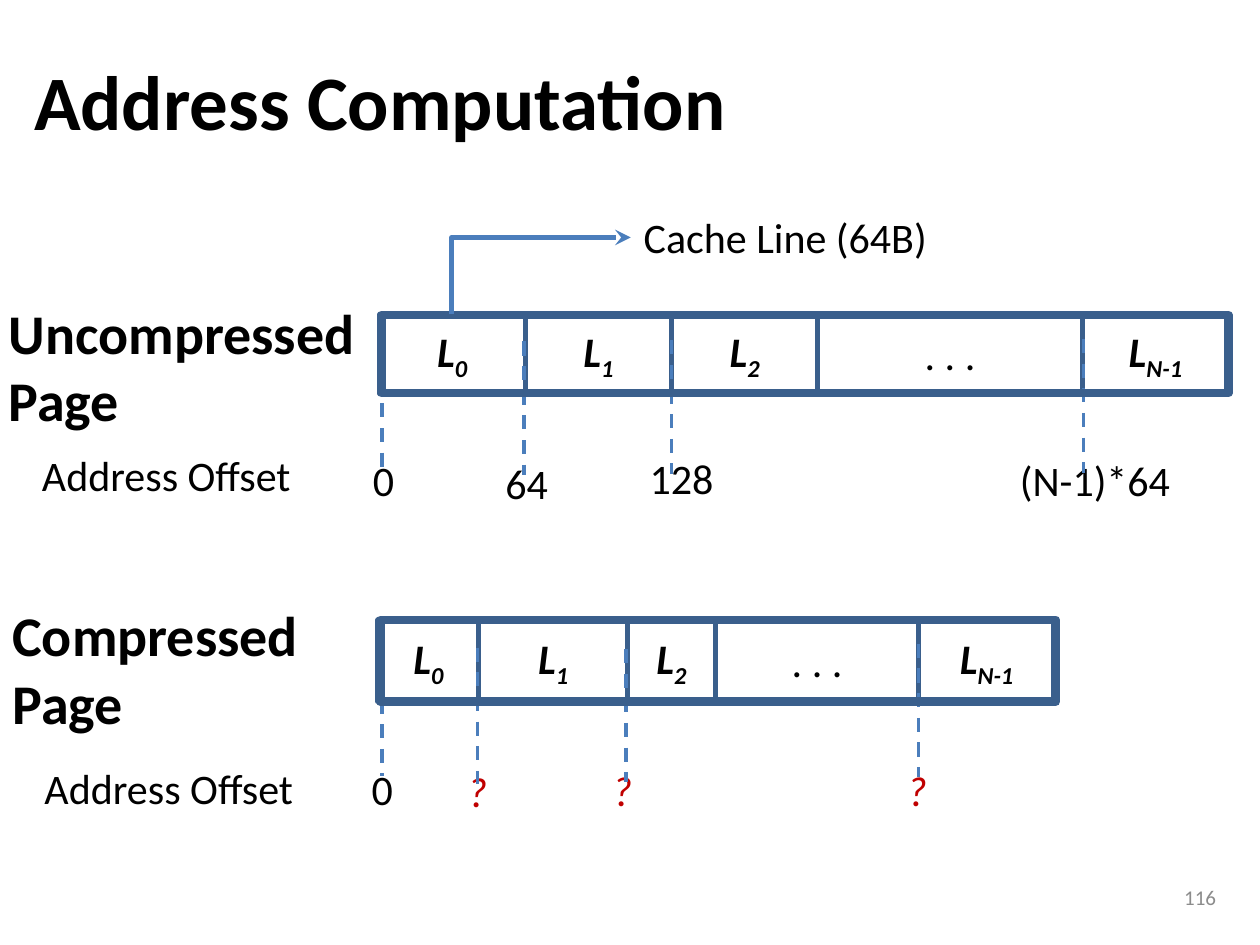
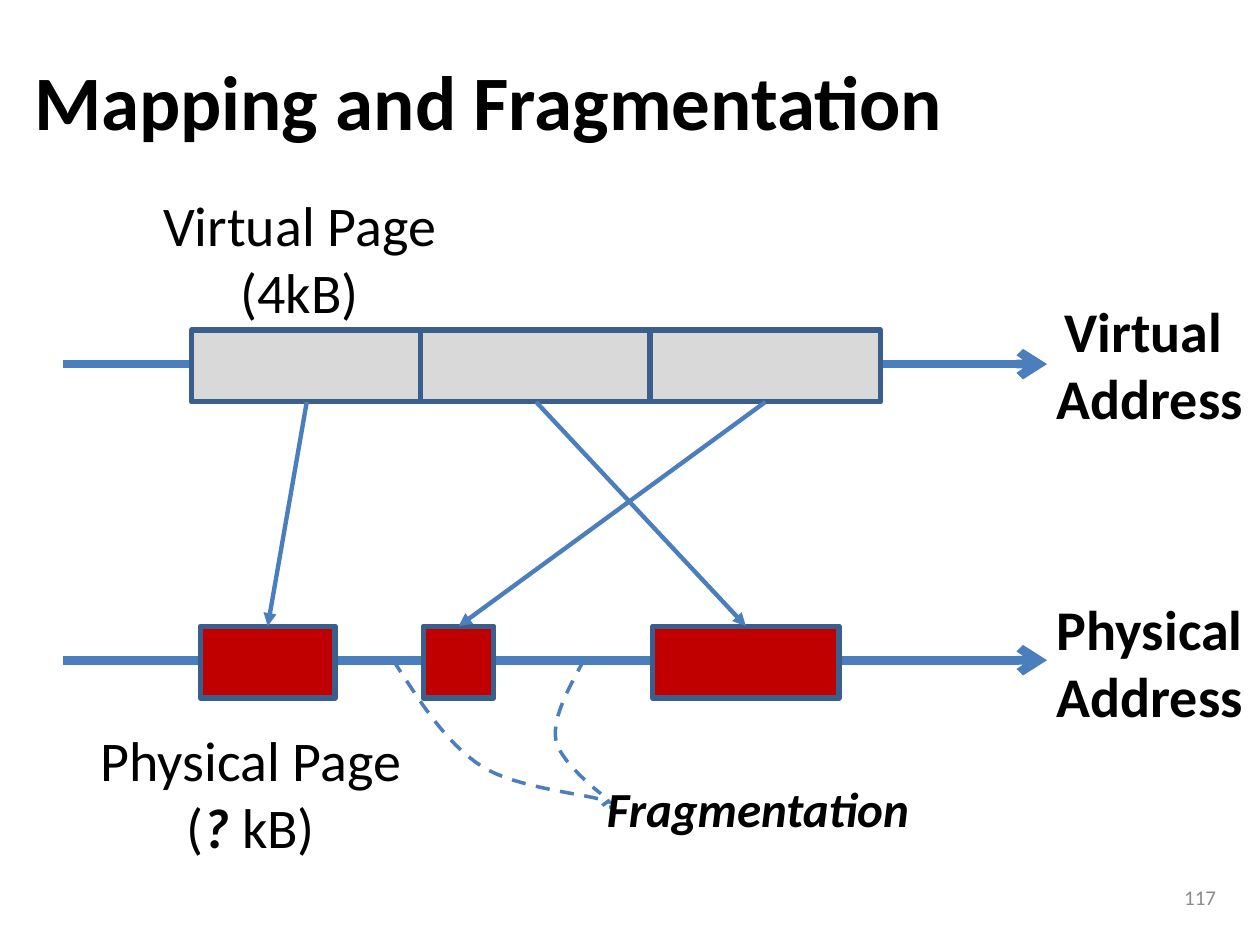
"""Build two slides on address computation and page mapping under memory compression."""
from dataclasses import dataclass
from itertools import accumulate

from lxml.etree import SubElement
from pptx import Presentation
from pptx.dml.color import RGBColor
from pptx.enum.dml import MSO_LINE
from pptx.enum.shapes import MSO_CONNECTOR, MSO_SHAPE
from pptx.enum.text import MSO_ANCHOR, PP_ALIGN
from pptx.oxml.ns import qn
from pptx.util import Inches, Pt

LEFT, CENTER, RIGHT = PP_ALIGN.LEFT, PP_ALIGN.CENTER, PP_ALIGN.RIGHT
TOP, MIDDLE = MSO_ANCHOR.TOP, MSO_ANCHOR.MIDDLE
STRAIGHT, ELBOW = MSO_CONNECTOR.STRAIGHT, MSO_CONNECTOR.ELBOW
RECT, DASH = MSO_SHAPE.RECTANGLE, MSO_LINE.DASH
TITLE_ONLY = 5
CURVE_STEPS = 16


@dataclass(frozen=True)
class Theme:
    font: str = "Calibri"
    ink: str = "000000"
    muted: str = "8C8C8C"
    accent: str = "4B7EBC"
    border: str = "3A5F8C"
    page: str = "D9D9D9"
    red: str = "C00000"
    title: int = 44
    head: int = 32
    callout: int = 28
    body: int = 24
    number: int = 12
    thin: float = 2
    arrow: float = 2.5
    medium: float = 3
    thick: float = 5


T = Theme()
BOLD = {"bold": True}
ITALIC = {"italic": True}
BOLD_ITALIC = BOLD | ITALIC


@dataclass(frozen=True)
class Run:
    text: str
    fmt: dict
    sub: bool = False


@dataclass(frozen=True)
class Box:
    x: float
    y: float
    w: float
    h: float

    def emu(self) -> list:
        return [Inches(v) for v in (self.x, self.y, self.w, self.h)]


@dataclass(frozen=True)
class Label:
    box: Box
    paras: tuple
    size: int = T.body
    align: PP_ALIGN = CENTER
    anchor: MSO_ANCHOR = TOP
    color: str = T.ink


@dataclass(frozen=True)
class Tick:
    x: float
    top: float
    bottom: float
    text: str
    box: Box


@dataclass(frozen=True)
class PageRow:
    left: float
    widths: tuple
    frame: Box
    ticks: tuple
    heading: str
    heading_box: Box
    offset_box: Box


def plain(text: str, **fmt) -> tuple:
    return (Run(text, fmt),)


def indexed(index: str) -> tuple:
    return (Run("L", BOLD_ITALIC), Run(index, BOLD_ITALIC, sub=True))


CELLS = (indexed("0"), indexed("1"), indexed("2"), plain(". . ."), indexed("N-1"))

UNCOMPRESSED = PageRow(
    3.01, (1.16, 1.16, 1.16, 2.1, 1.16), Box(3.03, 2.5, 6.72, 0.62),
    (Tick(3.03, 2.81, 3.71, "0", Box(2.68, 3.56, 0.73, 0.5)),
     Tick(4.16, 2.71, 3.77, "64", Box(3.76, 3.58, 0.84, 0.5)),
     Tick(5.33, 2.7, 3.76, "128", Box(4.83, 3.54, 1.16, 0.5)),
     Tick(8.6, 2.69, 3.75, "(N-1)*64", Box(7.48, 3.56, 2.42, 0.5))),
    "Uncompressed Page", Box(-0.03, 2.32, 3.42, 1.18), Box(-0.03, 3.52, 2.7, 0.5))

COMPRESSED = PageRow(
    3, (0.8, 1.18, 0.7, 1.61, 1.08), Box(3.02, 4.92, 5.36, 0.65),
    (Tick(3.03, 5.16, 6.16, "0", Box(2.67, 6.01, 0.73, 0.5)),
     Tick(3.79, 5.14, 6.22, "?", Box(3.46, 6.03, 0.66, 0.5)),
     Tick(4.97, 5.15, 6.21, "?", Box(4.61, 6.02, 0.66, 0.5)),
     Tick(7.29, 5.11, 6.17, "?", Box(6.95, 6.02, 0.66, 0.5))),
    "Compressed Page", Box(0, 4.72, 3, 1.18), Box(0, 6, 2.68, 0.5))


def write(sp, label: Label) -> None:
    tf = sp.text_frame
    tf.word_wrap = True
    tf.vertical_anchor = label.anchor
    for i, runs in enumerate(label.paras):
        p = tf.add_paragraph() if i else tf.paragraphs[0]
        p.alignment = label.align
        for run in runs:
            r = p.add_run()
            r.text = run.text
            base = {"name": T.font, "size": Pt(label.size), "bold": False, "italic": False}
            for key, value in (base | run.fmt).items():
                setattr(r.font, key, value)
            r.font.color.rgb = RGBColor.from_string(label.color)
            if run.sub:
                r.font._element.set("baseline", "-25000")


def add_label(slide, label: Label) -> None:
    write(slide.shapes.add_textbox(*label.box.emu()), label)


def style_line(sp, color: str, width: float, dashed: bool = False, tail: str = "") -> None:
    sp.line.color.rgb = RGBColor.from_string(color)
    sp.line.width = Pt(width)
    if dashed:
        sp.line.dash_style = DASH
    if tail:
        SubElement(sp.element.spPr.get_or_add_ln(), qn("a:tailEnd"), type=tail)


def add_rect(slide, box: Box, fill: str = "", width: float = T.medium):
    sp = slide.shapes.add_shape(RECT, *box.emu())
    sp.shadow.inherit = False
    if fill:
        sp.fill.solid()
        sp.fill.fore_color.rgb = RGBColor.from_string(fill)
    else:
        sp.fill.background()
    style_line(sp, T.border, width)
    return sp


def add_line(slide, start: tuple, end: tuple, width: float, kind=STRAIGHT,
             dashed: bool = False, tail: str = ""):
    sp = slide.shapes.add_connector(kind, *[Inches(v) for v in start + end])
    style_line(sp, T.accent, width, dashed, tail)
    SubElement(sp.element.spPr, qn("a:effectLst"))
    return sp


def bezier(points: tuple, t: float) -> tuple:
    weights = ((1 - t) ** 3, 3 * t * (1 - t) ** 2, 3 * t * t * (1 - t), t ** 3)
    return tuple(Inches(sum(w * p[axis] for w, p in zip(weights, points))) for axis in (0, 1))


def add_curve(slide, *knots: tuple) -> None:
    points = [bezier(knots[i:i + 4], step / CURVE_STEPS)
              for i in range(0, len(knots) - 1, 3) for step in range(1, CURVE_STEPS + 1)]
    builder = slide.shapes.build_freeform(*[Inches(v) for v in knots[0]])
    builder.add_line_segments(points, close=False)
    sp = builder.convert_to_shape()
    sp.shadow.inherit = False
    sp.fill.background()
    style_line(sp, T.accent, T.thin, dashed=True)


def new_slide(prs, title: str, number: int):
    slide = prs.slides.add_slide(prs.slide_layouts[TITLE_ONLY])
    box = Box(0.17, 0.17, 9, 1.25)
    sp = slide.shapes.title
    sp.left, sp.top, sp.width, sp.height = box.emu()
    write(sp, Label(box, (plain(title, **BOLD),), T.title, LEFT, MIDDLE))
    add_label(slide, Label(Box(7.42, 6.92, 2.33, 0.4), (plain(str(number)),),
                           T.number, RIGHT, MIDDLE, T.muted))
    return slide


def add_page_row(slide, row: PageRow) -> None:
    lefts = accumulate(row.widths, initial=row.left)
    for x, w, runs in zip(lefts, row.widths, CELLS):
        box = Box(x, row.frame.y, w, row.frame.h)
        write(add_rect(slide, box), Label(box, (runs,), anchor=MIDDLE))
    for tick in row.ticks:
        unknown = tick.text == "?"
        add_label(slide, Label(tick.box, (plain(tick.text, italic=unknown),),
                               color=T.red if unknown else T.ink))
        add_line(slide, (tick.x, tick.top), (tick.x, tick.bottom), T.thin, dashed=True)
    add_rect(slide, row.frame, width=T.thick)
    add_label(slide, Label(row.heading_box, (plain(row.heading, **BOLD),), T.head, LEFT))
    add_label(slide, Label(row.offset_box, (plain("Address Offset"),)))


def build_address_slide(prs) -> None:
    slide = new_slide(prs, "Address Computation", 116)
    for row in (UNCOMPRESSED, COMPRESSED):
        add_page_row(slide, row)
    elbow = add_line(slide, (4.6, 2.9), (3.99, 1.48), T.medium, ELBOW, tail="stealth")
    elbow.element.spPr.find(qn("a:prstGeom")).set("prst", "bentConnector2")
    elbow.element.spPr.find(qn("a:xfrm")).set("rot", "5400000")
    add_label(slide, Label(Box(5.01, 1.63, 2.51, 0.5), (plain("Cache Line (64B)"),), align=LEFT))


def build_mapping_slide(prs) -> None:
    slide = new_slide(prs, "Mapping and Fragmentation", 117)
    page_h, virtual_y, physical_y = 0.57, 2.62, 4.97
    virtual = [Box(1.52 + 1.82 * i, virtual_y, 1.83, page_h) for i in range(3)]
    physical = [Box(x, physical_y, w, page_h)
                for x, w in ((1.59, 1.07), (3.36, 0.56), (5.18, 1.48))]
    axes = ((2.89, virtual, T.page, "Virtual ", 2.3),
            (5.24, physical, T.red, "Physical ", 4.67))
    for y, pages, fill, name, label_y in axes:
        add_line(slide, (0.5, y), (8.31, y), T.thick, tail="arrow")
        for box in pages:
            add_rect(slide, box, fill)
        add_label(slide, Label(Box(8.25, label_y, 1.75, 1.18),
                               (plain(name, **BOLD), plain("Address", **BOLD)), T.head))
    for src, dst in zip(virtual, (physical[0], physical[2], physical[1])):
        add_line(slide, (src.x + src.w / 2, src.y + src.h), (dst.x + dst.w / 2, dst.y),
                 T.arrow, tail="triangle")
    add_curve(slide, (4.64, 5.23), (4.52, 5.45), (4.39, 5.68), (4.41, 5.86),
              (4.43, 6.04), (4.77, 6.3), (4.77, 6.3))
    add_curve(slide, (3.12, 5.24), (3.33, 5.56), (3.53, 5.89), (3.82, 6.08),
              (4.1, 6.26), (4.66, 6.3), (4.82, 6.36), (4.98, 6.41), (4.77, 6.41),
              (4.77, 6.41), (4.77, 6.4), (4.8, 6.38), (4.84, 6.35))
    size = (Run("(", {}), Run("? ", BOLD_ITALIC), Run("kB) ", {}))
    for label in (
        Label(Box(0.96, 1.46, 2.94, 1.18), (plain("Virtual Page "), plain("(4kB) ")), T.head),
        Label(Box(0.29, 5.71, 3.5, 1.18), (plain("Physical Page "), size), T.head),
        Label(Box(4.14, 6.13, 3.75, 0.57), (plain("Fragmentation", **BOLD_ITALIC),), T.callout),
    ):
        add_label(slide, label)


def main() -> None:
    prs = Presentation()
    prs.slide_width, prs.slide_height = Inches(10), Inches(7.5)
    build_address_slide(prs)
    build_mapping_slide(prs)
    prs.save("out.pptx")


if __name__ == "__main__":
    main()
